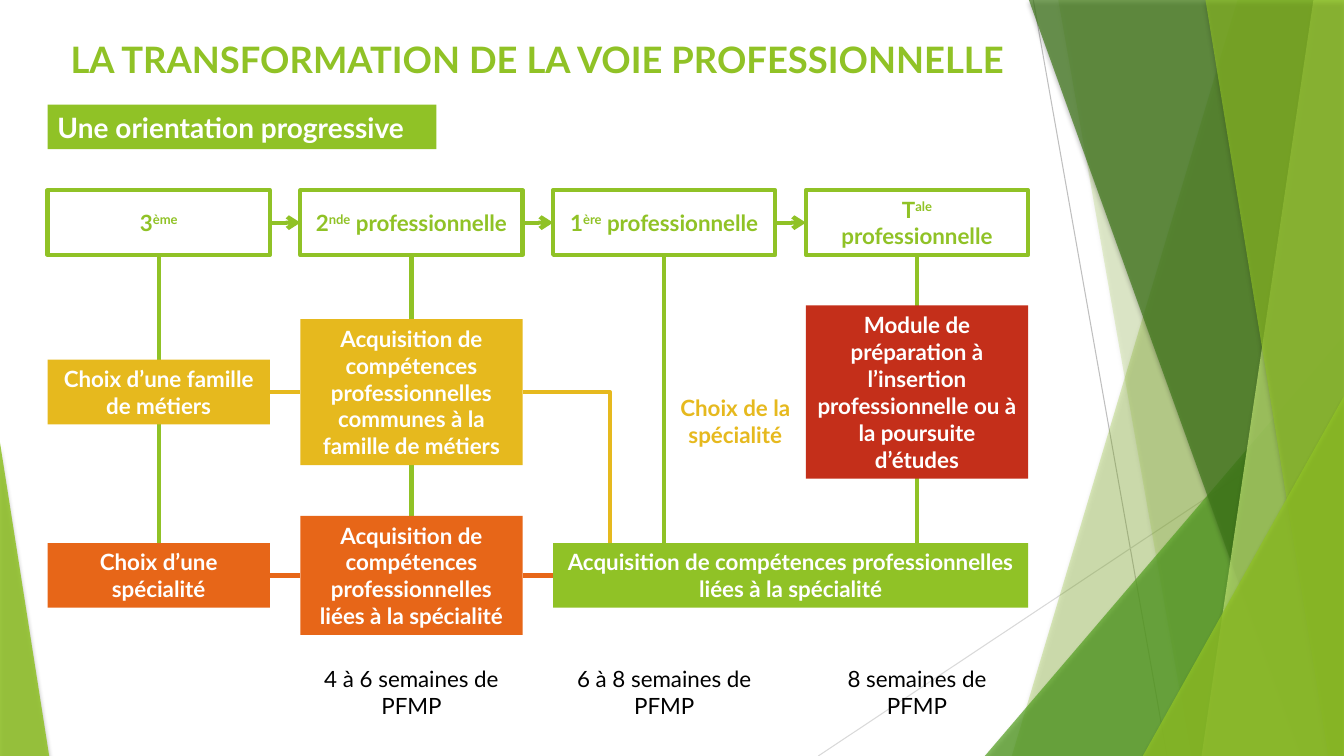
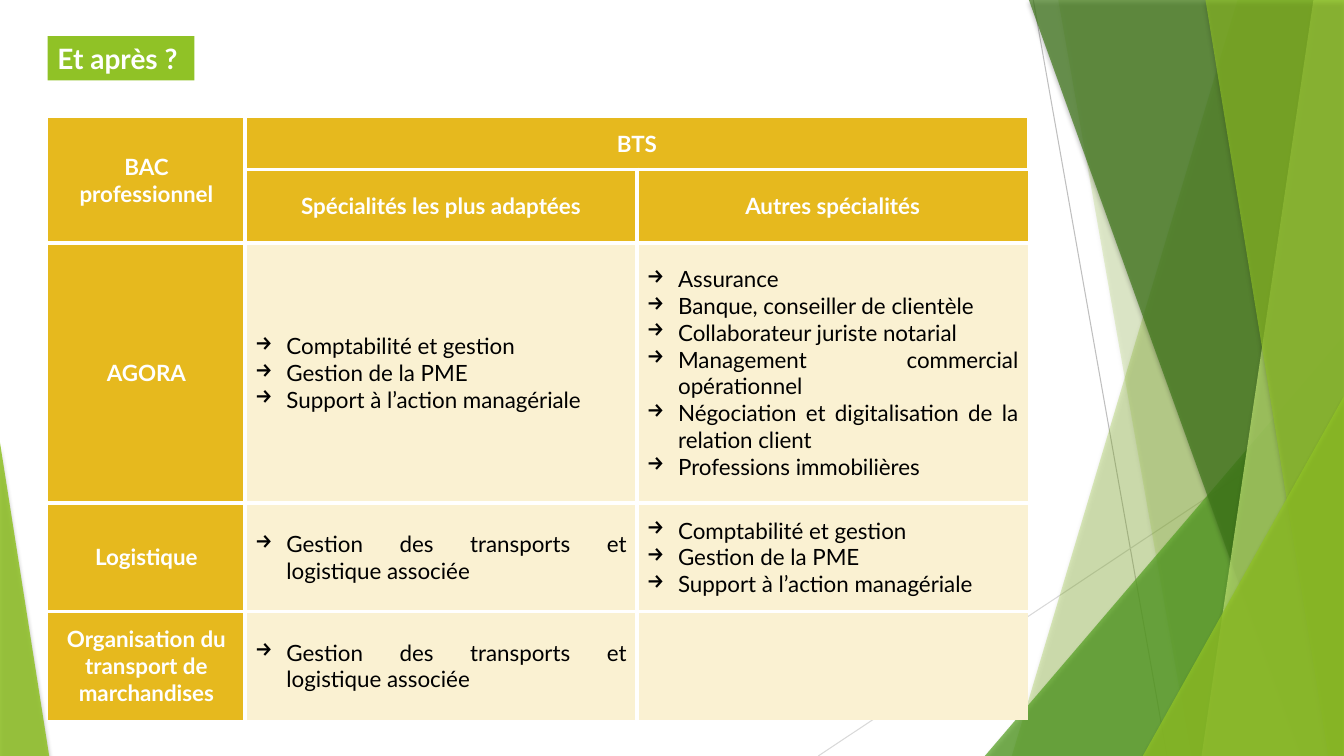
from lxml import etree
from pptx import Presentation
from pptx import util as u
from pptx.dml.color import RGBColor
from pptx.enum import shapes, text
from pptx.oxml.ns import qn

GREEN = RGBColor(0x90, 0xC2, 0x26)
LEAF = RGBColor(0x54, 0xA0, 0x21)
DARK = RGBColor(0x3F, 0x78, 0x19)
LIME = RGBColor(0xC0, 0xE4, 0x74)
GOLD = RGBColor(0xE6, 0xB9, 0x1E)
CREAM = RGBColor(0xFA, 0xF1, 0xD2)
ORANGE = RGBColor(0xE7, 0x66, 0x18)
RED = RGBColor(0xC4, 0x2F, 0x1A)
WHITE = RGBColor(0xFF, 0xFF, 0xFF)
BLACK = RGBColor(0, 0, 0)
GREY = RGBColor(0xBF, 0xBF, 0xBF)
PALE = RGBColor(0xD9, 0xD9, 0xD9)

WIDE, HIGH = 33.87, 19.05
LEFT, STEP, WIDTH, TALL = 1.2, 6.37, 5.6, 1.63
SPAN = 3 * STEP + WIDTH
MID = text.MSO_ANCHOR.MIDDLE
ALIGN = text.PP_ALIGN
KIND = shapes.MSO_SHAPE
LINK = shapes.MSO_CONNECTOR


def put(node, tag, **atts):
    return etree.SubElement(node, qn("a:" + tag), atts)


def assign(item, vals):
    for name, val in vals.items():
        setattr(item, name, val)


class Deck:
    """Holds the shared style and the current slide."""

    font = "Lato"

    def __init__(self):
        self.prs = Presentation()
        assign(self.prs, {"slide_width": u.Cm(WIDE), "slide_height": u.Cm(HIGH)})

    def page(self):
        self.slide = self.prs.slides.add_slide(self.prs.slide_layouts[6])
        self.line((26.04, 0), (29.41, HIGH), GREY, 0.75)
        self.line((WIDE, 10.24), (20.62, HIGH), PALE, 0.75)
        self.band(31.19, 25.5, GREEN, 30)
        self.band(26.67, 30.02, GREEN, 20)
        self.peak(24.82, 8.46, WIDE - 24.82, 1, LEAF, 72)
        self.band(25.93, 32.79, DARK, 70)
        self.band(33.1, 30.28, LIME, 70)
        self.band(30.38, 33.48, GREEN, 65)
        self.peak(28.8, 9.98, WIDE - 28.8, 1, GREEN, 80)
        self.peak(0, 11.15, 1.24, 0, GREEN, 85)

    def band(self, top, foot, color, alpha):
        form = self.slide.shapes.build_freeform(u.Cm(top), 0)
        form.add_line_segments([(u.Cm(x), u.Cm(y)) for x, y in
                                ((WIDE, 0), (WIDE, HIGH), (foot, HIGH))])
        self.glass(form.convert_to_shape(), color, alpha)

    def peak(self, x, y, w, tip, color, alpha):
        shape = self.slide.shapes.add_shape(
            KIND.ISOSCELES_TRIANGLE, *map(u.Cm, (x, y, w, HIGH - y)))
        shape.adjustments[0] = tip
        self.glass(shape, color, alpha)

    def paint(self, shape, fill=None, edge=None):
        if fill is None:
            shape.fill.background()
        else:
            shape.fill.solid()
            shape.fill.fore_color.rgb = fill
        if edge is None:
            shape.line.fill.background()
        else:
            shape.line.color.rgb = edge
            shape.line.width = u.Pt(3)
        shape.shadow.inherit = False

    def glass(self, shape, color, alpha):
        self.paint(shape, color)
        props = shape._element.spPr
        put(props.find(".//" + qn("a:srgbClr")), "alpha", val=str(alpha * 1000))
        cast = put(props.find(qn("a:effectLst")), "outerShdw", blurRad="38100",
                   dist="25400", dir="5400000", algn="ctr", rotWithShape="0")
        put(put(cast, "srgbClr", val="000000"), "alpha", val="35000")

    def line(self, start, end, color, width=3, head=False, kind=LINK.STRAIGHT):
        link = self.slide.shapes.add_connector(kind, *map(u.Cm, start + end))
        link.line.color.rgb = color
        link.line.width = u.Pt(width)
        props = link._element.spPr
        if head:
            put(props.find(qn("a:ln")), "tailEnd", type="arrow")
        if kind == LINK.ELBOW:
            put(props.find(".//" + qn("a:avLst")), "gd", name="adj1", fmla="val 100000")
        put(props, "effectLst")

    def label(self, frame, words, color, size=16, bold=True, align=ALIGN.CENTER,
              space=1.0, mark=None):
        frame.word_wrap = True
        for i, row in enumerate(words.split("\n")):
            para = frame.add_paragraph() if i else frame.paragraphs[0]
            assign(para, {"alignment": align, "line_spacing": space})
            if mark:
                props = para._p.get_or_add_pPr()
                props.set("marL", str(u.Cm(0.79)))
                props.set("indent", str(-u.Cm(0.79)))
                put(put(props, "buClr"), "srgbClr", val=str(color))
                put(props, "buChar", char=mark)
            for j, part in enumerate(row.split("^")):
                if part:
                    run = para.add_run()
                    run.text = part
                    assign(run.font, {"name": self.font, "size": u.Pt(size), "bold": bold})
                    run.font.color.rgb = color
                    if j % 2:
                        run._r.get_or_add_rPr().set("baseline", "30000")

    def box(self, x, mid, w, h, words, color=WHITE, fill=None, edge=None, **fmt):
        shape = self.slide.shapes.add_shape(
            KIND.RECTANGLE, *map(u.Cm, (x, mid - h / 2, w, h)))
        self.paint(shape, fill, edge)
        shape.text_frame.vertical_anchor = MID
        self.label(shape.text_frame, words, color, **fmt)

    def note(self, x, mid, w, h, words, color, **fmt):
        area = self.slide.shapes.add_textbox(*map(u.Cm, (x, mid - h / 2, w, h)))
        area.text_frame.vertical_anchor = MID
        self.label(area.text_frame, words, color, **fmt)

    def tag(self, mid, w, words):
        self.box(LEFT, mid, w, 1.12, words, fill=GREEN, size=20, align=ALIGN.LEFT)

    def grid(self, top, cols, rows, data, joins):
        table = self.slide.shapes.add_table(
            len(rows), len(cols), *map(u.Cm, (LEFT, top, sum(cols), sum(rows)))).table
        assign(table, {"first_row": False, "horz_banding": False})
        for col, w in zip(table.columns, cols):
            col.width = u.Cm(w)
        for row, h in zip(table.rows, rows):
            row.height = u.Cm(h)
        for first, last in joins:
            table.cell(*first).merge(table.cell(*last))
        for r, row in enumerate(data):
            for c, words in enumerate(row):
                self.cell(table.cell(r, c), words, r < 2 or c == 0,
                          {"L": c > 0, "R": c < len(cols) - 1,
                           "T": r > 0, "B": r < len(rows) - 1})

    def cell(self, cell, words, head, sides):
        props = cell._tc.get_or_add_tcPr()
        for side, drawn in sides.items():
            edge = put(props, "ln" + side, w=str(u.Pt(3)) if drawn else "0")
            if drawn:
                put(put(edge, "solidFill"), "srgbClr", val=str(WHITE))
            else:
                put(edge, "noFill")
        cell.fill.solid()
        cell.fill.fore_color.rgb = GOLD if head else CREAM
        assign(cell, {"vertical_anchor": MID} | {
            "margin_" + side: u.Cm(0.25) for side in ("left", "right", "top", "bottom")})
        if head:
            self.label(cell.text_frame, words, WHITE)
        else:
            self.label(cell.text_frame, words, BLACK, bold=False,
                       align=ALIGN.JUSTIFY, mark="→")


def route(deck):
    deck.page()
    deck.tag(3.2, 9.8, "Une orientation progressive")
    deck.note(LEFT, 1.42, SPAN, 1.42, "LA TRANSFORMATION DE LA VOIE PROFESSIONNELLE",
              GREEN, size=26, space=1.1)
    xs = [LEFT + STEP * i for i in range(4)]
    year, core, goal, foot = 5.61, 9.88, 14.5, 17.45
    for x in xs:
        deck.line((x + WIDTH / 2, year + TALL / 2), (x + WIDTH / 2, goal), GREEN)
    for x, after in zip(xs, xs[1:]):
        deck.line((x + WIDTH, year), (after, year), GREEN, head=True)
    deck.line((xs[0] + WIDTH, core), (xs[1], core), GOLD)
    deck.line((xs[1] + WIDTH, core), (15.37, goal - TALL / 2), GOLD, kind=LINK.ELBOW)
    for x, after in zip(xs[:2], xs[1:3]):
        deck.line((x + WIDTH, goal), (after, goal), ORANGE)
    levels = ("3^ème", "2^nde^ professionnelle", "1^ère^ professionnelle",
              "T^ale\nprofessionnelle")
    for x, words in zip(xs, levels):
        deck.box(x, year, WIDTH, TALL, words, GREEN, edge=GREEN)
    skill = "Acquisition de compétences professionnelles "
    trade = skill + "liées à la spécialité"
    steps = (
        (0, core, WIDTH, TALL, GOLD, "Choix d’une famille de métiers"),
        (0, goal, WIDTH, TALL, ORANGE, "Choix d’une spécialité"),
        (1, core, WIDTH, 3.68, GOLD, skill + "communes à la famille de métiers"),
        (1, goal, WIDTH, 3, ORANGE, trade),
        (2, goal, STEP + WIDTH, TALL, GREEN, trade),
        (3, core, WIDTH, 4.37, RED, "Module de préparation à l’insertion "
         "professionnelle ou à la poursuite d’études"),
    )
    for i, mid, w, h, fill, words in steps:
        deck.box(xs[i], mid, w, h, words, fill=fill)
    for x, span in zip(xs[1:], ("4 à 6", "6 à 8", "8")):
        deck.note(x, foot, WIDTH, TALL, span + " semaines de PFMP", BLACK, bold=False)
    deck.note(16.43, 10.62, 4.2, TALL, "Choix de la spécialité", GOLD)


def sequel(deck):
    deck.page()
    office = "Comptabilité et gestion\nGestion de la PME\nSupport à l’action managériale"
    freight = "Gestion des transports et logistique associée"
    others = "\n".join((
        "Assurance", "Banque, conseiller de clientèle", "Collaborateur juriste notarial",
        "Management commercial opérationnel",
        "Négociation et digitalisation de la relation client",
        "Professions immobilières"))
    data = (
        ("BAC professionnel", "BTS", ""),
        ("", "Spécialités les plus adaptées", "Autres spécialités"),
        ("AGORA", office, others),
        ("Logistique", freight, office),
        ("Organisation du transport de marchandises", freight, ""),
    )
    deck.grid(2.97, (4.98, 9.87, 9.87), (1.3, 1.83, 6.55, 2.74, 2.74), data,
              (((0, 0), (1, 0)), ((0, 1), (0, 2))))
    deck.tag(1.47, 3.7, "Et après ?")


def main():
    deck = Deck()
    route(deck)
    sequel(deck)
    deck.prs.save("out.pptx")


if __name__ == "__main__":
    main()
